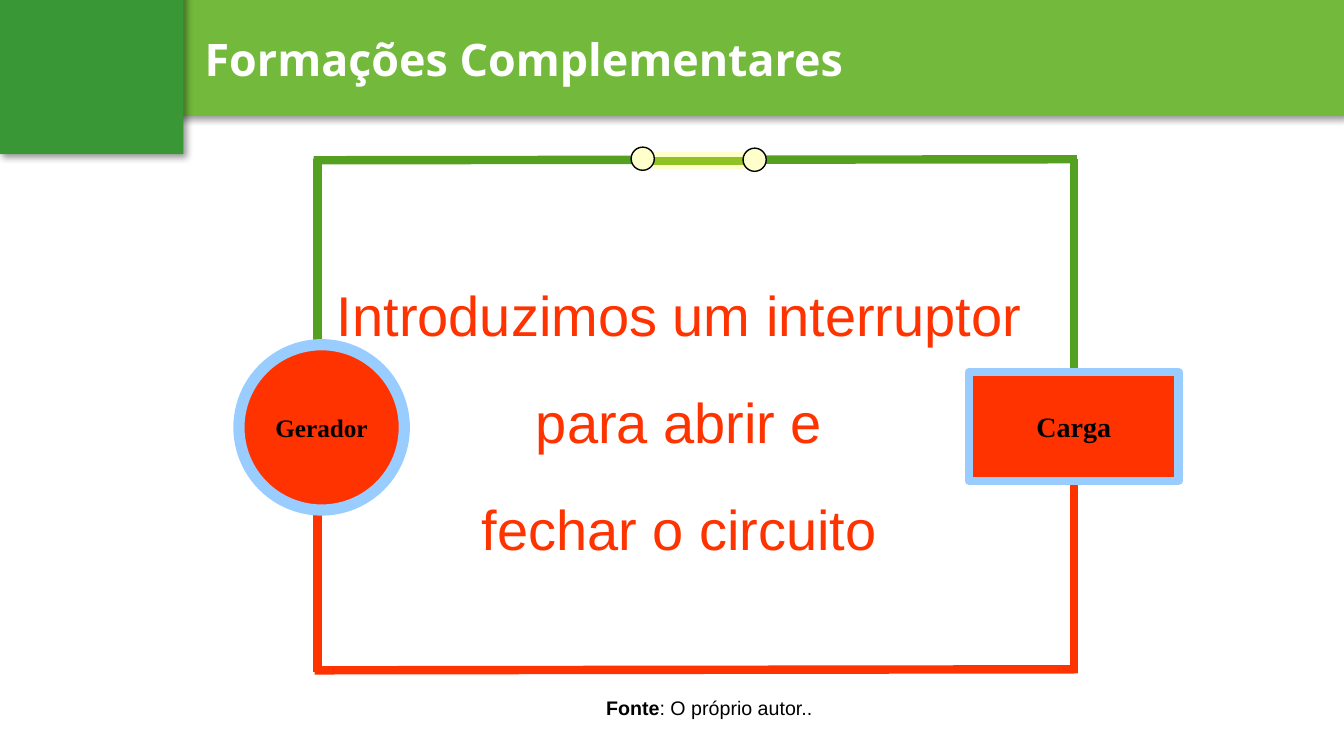
"""Build a slide showing a circuit with a generator, a load and a switch."""
from lxml.etree import SubElement
from pptx import Presentation
from pptx.dml.color import RGBColor
from pptx.enum.shapes import MSO_CONNECTOR, MSO_SHAPE
from pptx.enum.text import MSO_ANCHOR, MSO_AUTO_SIZE, PP_ALIGN
from pptx.oxml.ns import qn
from pptx.util import Inches, Pt

WHITE = RGBColor(0xFF, 0xFF, 0xFF)
BLACK = RGBColor(0x00, 0x00, 0x00)
BAND_GREEN = RGBColor(0x72, 0xB9, 0x3C)
CORNER_GREEN = RGBColor(0x39, 0x97, 0x36)
WIRE_GREEN = RGBColor(0x54, 0xA0, 0x21)
SWITCH_GREEN = RGBColor(0x90, 0xC2, 0x26)
RED = RGBColor(0xFF, 0x33, 0x00)
BLUE = RGBColor(0x99, 0xCC, 0xFF)
CREAM = RGBColor(0xFF, 0xFF, 0xCC)


def write_span(para, text, size, font, color, bold=False):
    span = para.add_run()
    span.text = text
    span.font.size = Pt(size)
    span.font.name = font
    span.font.bold = bold
    span.font.color.rgb = color
    return span


def cast_shadow(effects):
    shadow = SubElement(effects, qn("a:outerShdw"), blurRad=str(Pt(5)), dist=str(Pt(3)),
                        dir="2700000", algn="tl", rotWithShape="0")
    color = SubElement(shadow, qn("a:srgbClr"), val="000000")
    SubElement(color, qn("a:alpha"), val="40000")


deck = Presentation()
deck.slide_width = Inches(13.33)
deck.slide_height = Inches(7.5)
page = deck.slides.add_slide(deck.slide_layouts[5])
title = page.shapes.title

for left, top, width, height, color in [
    (1.41, 0, 11.93, 1.15, BAND_GREEN),
    (0, -0.08, 1.82, 1.61, CORNER_GREEN),
]:
    block = page.shapes.add_shape(MSO_SHAPE.RECTANGLE, Inches(left), Inches(top),
                                  Inches(width), Inches(height))
    block.fill.solid()
    block.fill.fore_color.rgb = color
    block.line.fill.background()
    block.shadow.inherit = False
    cast_shadow(block.element.spPr.find(qn("a:effectLst")))

block.element.addnext(title.element)
title.left, title.top = Inches(1.93), Inches(0.26)
title.width, title.height = Inches(10.82), Inches(0.64)
title.text_frame.vertical_anchor = MSO_ANCHOR.MIDDLE
para = title.text_frame.paragraphs[0]
para.alignment = PP_ALIGN.LEFT
span = write_span(para, "Formações Complementares", size=32, font="Open Sans",
                  color=WHITE, bold=True)
effects = SubElement(span.font.fill._xPr, qn("a:effectLst"))
span.font.fill._xPr.find(qn("a:solidFill")).addnext(effects)
cast_shadow(effects)

box = page.shapes.add_textbox(Inches(3.2), Inches(2.33), Inches(7.07), Inches(3.33))
box.text_frame.word_wrap = True
box.text_frame.auto_size = MSO_AUTO_SIZE.SHAPE_TO_FIT_TEXT
for index, text in enumerate(["Introduzimos um interruptor", "para abrir e",
                              "fechar o circuito"]):
    para = box.text_frame.add_paragraph() if index else box.text_frame.paragraphs[0]
    para.alignment = PP_ALIGN.CENTER
    para.line_spacing = 1.6
    write_span(para, text, size=40, font="Arial", color=RED)

circuit = page.shapes.add_group_shape()
wires = [
    (3.15, 4, 3.15, 1.58, WIRE_GREEN),
    (3.11, 1.59, 10.68, 1.58, WIRE_GREEN),
    (10.65, 4.25, 10.65, 1.58, WIRE_GREEN),
    (10.65, 6.67, 10.65, 4, RED),
    (3.12, 6.65, 10.69, 6.64, RED),
    (3.15, 6.67, 3.15, 4.25, RED),
    (6.48, 1.55, 7.4, 1.55, CREAM),
    (6.48, 1.64, 7.4, 1.64, CREAM),
    (6.34, 1.6, 7.5, 1.6, SWITCH_GREEN),
]
for *ends, color in wires:
    wire = circuit.shapes.add_connector(MSO_CONNECTOR.STRAIGHT, *map(Inches, ends))
    wire.line.color.rgb = color
    wire.line.width = Pt(6)
    SubElement(wire.element.spPr, qn("a:effectLst"))

parts = [
    (MSO_SHAPE.OVAL, 2.37, 3.42, 1.64, 1.64, RED, BLUE, 8, "Gerador", 18),
    (MSO_SHAPE.RECTANGLE, 9.61, 3.69, 2.08, 1.08, RED, BLUE, 6, "Carga", 20),
    (MSO_SHAPE.OVAL, 6.26, 1.46, 0.23, 0.23, CREAM, BLACK, 1, "", 0),
    (MSO_SHAPE.OVAL, 7.37, 1.47, 0.23, 0.23, CREAM, BLACK, 1, "", 0),
]
for kind, left, top, width, height, fill, outline, weight, label, size in parts:
    part = circuit.shapes.add_shape(kind, Inches(left), Inches(top),
                                    Inches(width), Inches(height))
    part.fill.solid()
    part.fill.fore_color.rgb = fill
    part.line.color.rgb = outline
    part.line.width = Pt(weight)
    part.shadow.inherit = False
    if label:
        part.text_frame.vertical_anchor = MSO_ANCHOR.MIDDLE
        para = part.text_frame.paragraphs[0]
        para.alignment = PP_ALIGN.CENTER
        write_span(para, label, size=size, font="Times New Roman", color=BLACK, bold=True)

credit = page.shapes.add_textbox(Inches(5.24), Inches(6.8), Inches(3.59), Inches(0.44))
frame = credit.text_frame
frame.word_wrap = True
frame.auto_size = MSO_AUTO_SIZE.SHAPE_TO_FIT_TEXT
frame.margin_top = frame.margin_bottom = Inches(0.1)
para = frame.paragraphs[0]
para.alignment = PP_ALIGN.CENTER
write_span(para, "Fonte", size=14, font="Arial", color=BLACK, bold=True)
write_span(para, ": O próprio autor..", size=14, font="Arial", color=BLACK)

deck.save("out.pptx")
